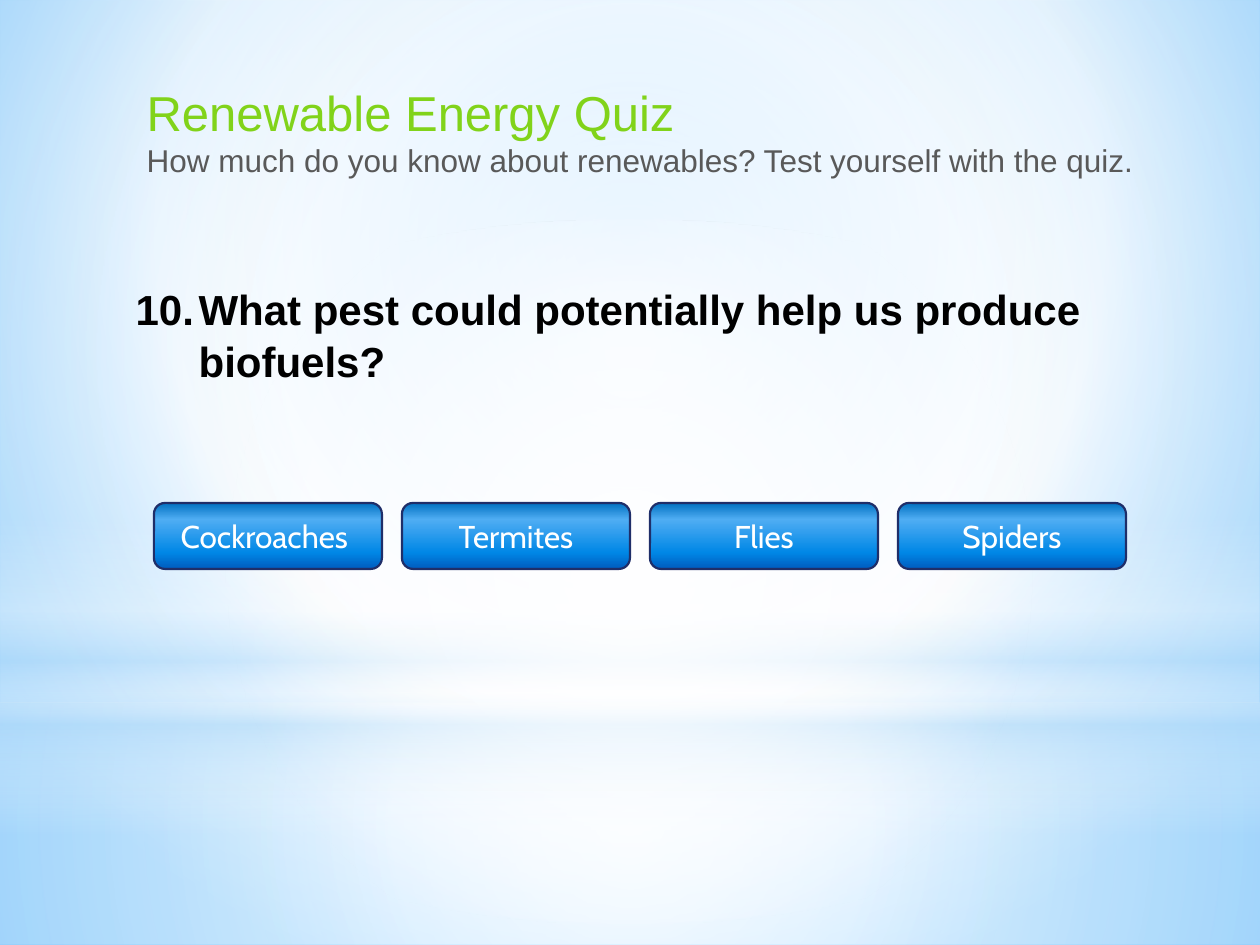
from dataclasses import dataclass
from typing import NamedTuple

from lxml.etree import SubElement
from pptx import Presentation
from pptx.dml.color import RGBColor
from pptx.enum.shapes import MSO_SHAPE
from pptx.enum.text import MSO_ANCHOR, MSO_AUTO_SIZE, PP_ALIGN
from pptx.oxml.ns import qn
from pptx.util import Pt

EMU_PER_PX = 914400 / 126


def px(length: int) -> int:
    return round(length * EMU_PER_PX)


@dataclass(frozen=True)
class Theme:
    heading: str = "81D31A"
    muted: str = "595959"
    ink: str = "000000"
    light: str = "FFFFFF"
    haze: str = "B4DCFA"
    sky: str = "9ED5FF"
    deep_sky: str = "5BB9FF"
    button_line: str = "1F2E69"
    button_shades: tuple = ("0070C0", "4FADF3", "0087E6", "005CBF")
    text_font: str = "Arial"
    button_font: str = "Cabin"
    heading_size: int = 28
    question_size: int = 24
    small_size: int = 18


THEME = Theme()


class Box(NamedTuple):
    left: int
    top: int
    width: int
    height: int


class Stop(NamedTuple):
    position: int
    color: str
    opacity: int = 100


class Gradient(NamedTuple):
    stops: tuple
    center: tuple | None = None  # left, top, right, bottom in percent; None is vertical


class Panel(NamedTuple):
    box: Box
    gradient: Gradient
    preset: MSO_SHAPE = MSO_SHAPE.RECTANGLE


MIDDLE = (50, 50, 50, 50)
BACKDROP = Gradient(
    (Stop(0, THEME.sky), Stop(60, THEME.light), Stop(100, THEME.deep_sky)), (20, 10, 20, 60)
)
PANELS = (
    Panel(Box(0, 703, 1260, 242), Gradient(
        (Stop(0, THEME.light, 91), Stop(37, THEME.light, 76), Stop(100, THEME.haze, 79)), MIDDLE)),
    Panel(Box(0, 0, 1260, 703), Gradient(
        (Stop(0, THEME.light, 89), Stop(48, THEME.light, 62), Stop(100, THEME.haze, 79)), MIDDLE)),
    Panel(Box(0, 519, 1260, 315), Gradient(
        (Stop(0, THEME.light, 0), Stop(29, THEME.light, 30), Stop(45, THEME.haze, 40),
         Stop(55, THEME.light, 26), Stop(65, THEME.haze, 60), Stop(100, THEME.light, 0)))),
    Panel(Box(0, 220, 1260, 703), Gradient(
        (Stop(0, THEME.light), Stop(56, THEME.light, 0)), MIDDLE), MSO_SHAPE.OVAL),
)
BUTTON_FILL = Gradient(tuple(map(Stop, (0, 25, 75, 100), THEME.button_shades)))
FIRST_BUTTON = Box(154, 503, 228, 66)
BUTTON_PITCH = 248
ANSWERS = ("Cockroaches ", "Termites", "Flies", "Spiders")


def paint_gradient(fill, owner, gradient: Gradient) -> None:
    """Swap a solid fill for a gradient with free stops and opacity."""
    fill.solid()
    fill.fore_color.rgb = RGBColor.from_string(THEME.light)
    solid = owner.find(f".//{qn('a:solidFill')}")
    grad = SubElement(owner, qn("a:gradFill"), rotWithShape="1")
    stop_list = SubElement(grad, qn("a:gsLst"))
    for stop in gradient.stops:
        item = SubElement(stop_list, qn("a:gs"), pos=str(stop.position * 1000))
        color = SubElement(item, qn("a:srgbClr"), val=stop.color)
        if stop.opacity < 100:
            SubElement(color, qn("a:alpha"), val=str(stop.opacity * 1000))
    if gradient.center:
        circle = SubElement(grad, qn("a:path"), {"path": "circle"})
        sides = {side: str(value * 1000) for side, value in zip("ltrb", gradient.center)}
        SubElement(circle, qn("a:fillToRect"), sides)
    else:
        SubElement(grad, qn("a:lin"), ang="5400000", scaled="0")
    solid.getparent().replace(solid, grad)


def write_text(para, text: str, *, size: int, color: str, font: str = THEME.text_font,
               bold: bool = False, align: PP_ALIGN = PP_ALIGN.LEFT, spacing: float = 1.0) -> None:
    para.alignment = align
    para.line_spacing = spacing
    para.space_before = para.space_after = Pt(0)
    span = para.add_run()
    span.text = text
    span.font.name = font
    span.font.size = Pt(size)
    span.font.bold = bold
    span.font.color.rgb = RGBColor.from_string(color)


def number_paragraph(para, start: int, indent: int) -> None:
    props = para._p.get_or_add_pPr()
    props.set("marL", str(px(indent)))
    props.set("indent", str(-px(indent)))
    SubElement(props, qn("a:buFont"), typeface=THEME.text_font)
    SubElement(props, qn("a:buAutoNum"), type="arabicPeriod", startAt=str(start))


def place(shape, box: Box):
    shape.left, shape.top, shape.width, shape.height = map(px, box)
    frame = shape.text_frame
    frame.word_wrap = True
    frame.vertical_anchor = MSO_ANCHOR.TOP
    frame.auto_size = MSO_AUTO_SIZE.SHAPE_TO_FIT_TEXT
    return frame


def add_filled_shape(page, preset: MSO_SHAPE, box: Box, gradient: Gradient):
    shape = page.shapes.add_shape(preset, *map(px, box))
    shape.shadow.inherit = False
    shape.line.fill.background()
    paint_gradient(shape.fill, shape._element.spPr, gradient)
    return shape


def add_button(page, box: Box, label: str) -> None:
    button = add_filled_shape(page, MSO_SHAPE.ROUNDED_RECTANGLE, box, BUTTON_FILL)
    button.line.color.rgb = RGBColor.from_string(THEME.button_line)
    button.line.width = Pt(1.25)
    button.text_frame.vertical_anchor = MSO_ANCHOR.MIDDLE
    write_text(button.text_frame.paragraphs[0], label, size=THEME.small_size,
               color=THEME.light, font=THEME.button_font, align=PP_ALIGN.CENTER)


def main() -> None:
    deck = Presentation()
    deck.slide_width, deck.slide_height = px(1260), px(945)
    page = deck.slides.add_slide(deck.slide_layouts[1])
    title, body = page.shapes.title, page.placeholders[1]

    # Backdrop, with the panels stacked behind the placeholders
    backdrop_fill = page.background.fill
    backdrop_fill.solid()
    paint_gradient(backdrop_fill, page._element.find(f".//{qn('p:bgPr')}"), BACKDROP)
    for panel in PANELS:
        shape = add_filled_shape(page, panel.preset, panel.box, panel.gradient)
        body._element.addprevious(shape._element)
    body._element.addnext(title._element)

    # Question
    question = place(body, Box(123, 275, 1042, 115)).paragraphs[0]
    write_text(question, "What pest could potentially help us produce biofuels?",
               size=THEME.question_size, color=THEME.ink, bold=True, spacing=1.04)
    number_paragraph(question, start=10, indent=63)

    # Heading and subtitle
    heading = place(title, Box(134, 76, 1062, 111))
    write_text(heading.paragraphs[0], "Renewable Energy Quiz",
               size=THEME.heading_size, color=THEME.heading)
    write_text(heading.add_paragraph(),
               "How much do you know about renewables? Test yourself with the quiz.",
               size=THEME.small_size, color=THEME.muted)

    # Answer buttons
    for index, answer in enumerate(ANSWERS):
        left = FIRST_BUTTON.left + index * BUTTON_PITCH
        add_button(page, FIRST_BUTTON._replace(left=left), answer)

    deck.save("out.pptx")


if __name__ == "__main__":
    main()
